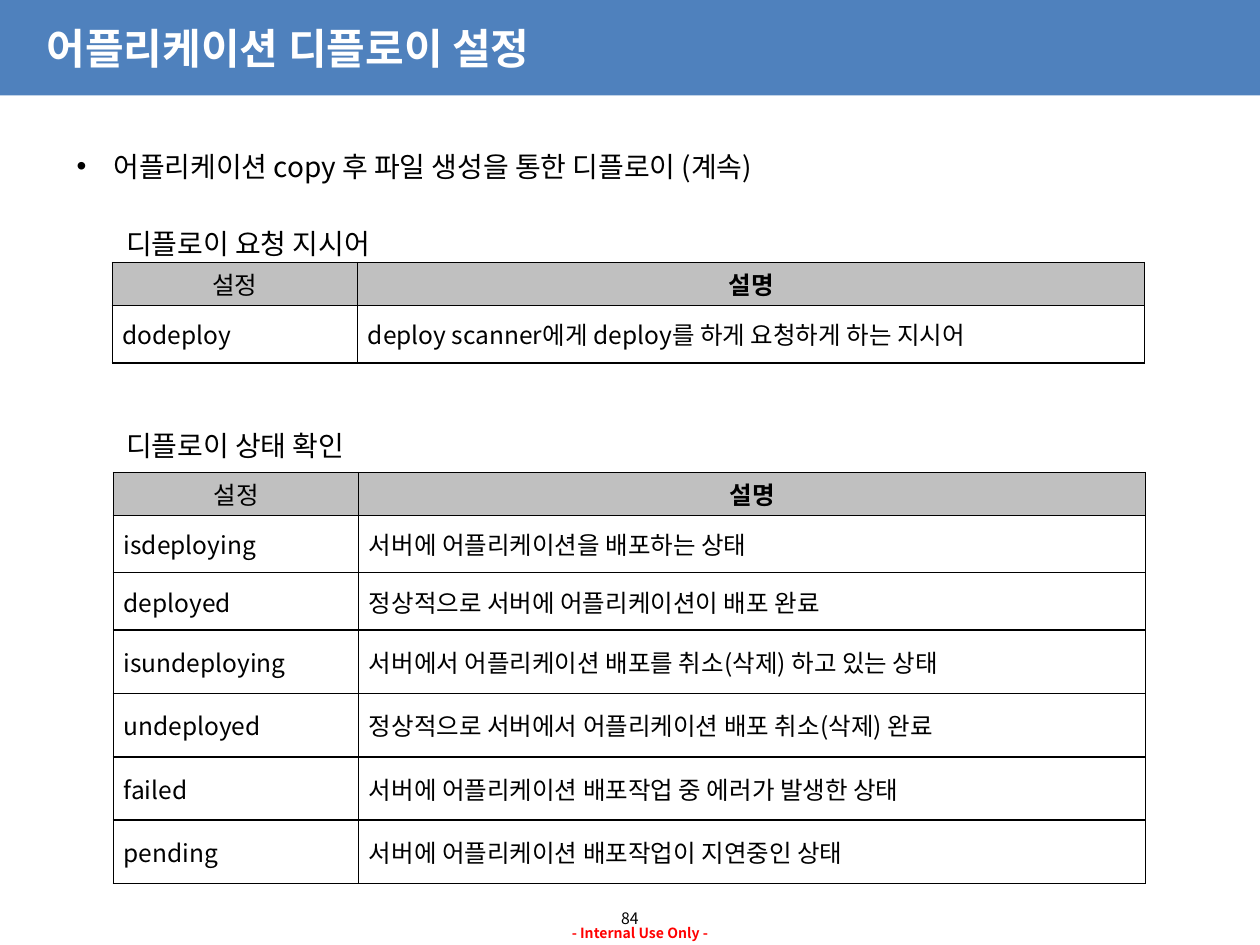
from dataclasses import dataclass

from lxml import etree
from pptx import Presentation
from pptx.dml.color import RGBColor
from pptx.enum.shapes import MSO_SHAPE
from pptx.enum.text import MSO_ANCHOR as Anchor, PP_ALIGN as Align
from pptx.oxml import parse_xml
from pptx.oxml.ns import nsdecls, qn
from pptx.util import Pt


@dataclass(frozen=True)
class Theme:
    font: str = "Noto Sans CJK KR"
    banner: RGBColor = RGBColor(0x4F, 0x81, 0xBD)
    header: RGBColor = RGBColor(0xC0, 0xC0, 0xC0)
    white: RGBColor = RGBColor(0xFF, 0xFF, 0xFF)
    black: RGBColor = RGBColor(0, 0, 0)
    red: RGBColor = RGBColor(0xFF, 0, 0)
    title: int = 24
    body: int = 16
    cell: int = 14
    page: int = 9
    notice: int = 8


theme = Theme()


def write(frame, text, size=theme.body, color=theme.black, bold=False,
          align=Align.LEFT, spacing=1.0, indent=0, bullet=False):
    """Fill a text frame with one formatted paragraph."""
    paragraph = frame.paragraphs[0]
    properties = paragraph._p.get_or_add_pPr()
    if indent:
        properties.set("marL", str(Pt(indent)))
    if bullet:
        properties.set("indent", str(-Pt(indent)))
        etree.SubElement(properties, qn("a:buFont"), typeface="Arial")
        etree.SubElement(properties, qn("a:buChar"), char="•")
    paragraph.alignment = align
    paragraph.line_spacing = spacing
    run = paragraph.add_run()
    run.text = text
    font = run.font
    font.name, font.size, font.bold = theme.font, Pt(size), bold
    font.color.rgb = color
    etree.SubElement(run._r.get_or_add_rPr(), qn("a:ea"), typeface=theme.font)


def add_text(left, top, width, height, text, margins=(7.2, 3.6),
             anchor=Anchor.TOP, wrap=True, **style):
    box = slide.shapes.add_textbox(Pt(left), Pt(top), Pt(width), Pt(height))
    frame = box.text_frame
    frame.word_wrap = wrap
    frame.vertical_anchor = anchor
    frame.margin_left = frame.margin_right = Pt(margins[0])
    frame.margin_top = frame.margin_bottom = Pt(margins[1])
    write(frame, text, **style)


presentation = Presentation()
presentation.slide_width, presentation.slide_height = Pt(720), Pt(540)
slide = presentation.slides.add_slide(presentation.slide_layouts[6])

# Banner, title and footer
banner = slide.shapes.add_shape(MSO_SHAPE.RECTANGLE, 0, 0, Pt(720), Pt(54.6))
banner.shadow.inherit = False
banner.fill.solid()
banner.fill.fore_color.rgb = theme.banner
banner.line.fill.background()
add_text(19.6, 0, 675, 54.6, "어플리케이션 디플로이 설정", anchor=Anchor.MIDDLE,
         size=theme.title, color=theme.white, bold=True)
add_text(339, 510.5, 42, 28.8, "84", margins=(0, 0), anchor=Anchor.MIDDLE,
         wrap=False, size=theme.page, align=Align.CENTER)
add_text(263.5, 524.9, 204.5, 17.3, "- Internal Use Only -", size=theme.notice,
         color=theme.red, bold=True, align=Align.CENTER)

# Topic and section headings
add_text(36.7, 77.8, 618.5, 30.2, "어플리케이션 copy 후 파일 생성을 통한 디플로이 (계속)",
         spacing=1.2, indent=21, bullet=True)
for top, heading in ((116.6, "디플로이 요청 지시어"), (231.5, "디플로이 상태 확인")):
    add_text(65, top, 590, 42, heading, spacing=1.5)

# Tables: left, top, then (row height, setting, description)
tables = [
    (64.2, 150, [
        (32.8, "dodeploy", "deploy scanner에게 deploy를 하게 요청하게 하는 지시어"),
    ]),
    (64.8, 270, [
        (32.8, "isdeploying", "서버에 어플리케이션을 배포하는 상태"),
        (32.8, "deployed", "정상적으로 서버에 어플리케이션이 배포 완료"),
        (36.2, "isundeploying", "서버에서 어플리케이션 배포를 취소(삭제) 하고 있는 상태"),
        (36.2, "undeployed", "정상적으로 서버에서 어플리케이션 배포 취소(삭제) 완료"),
        (36.2, "failed", "서버에 어플리케이션 배포작업 중 에러가 발생한 상태"),
        (36.2, "pending", "서버에 어플리케이션 배포작업이 지연중인 상태"),
    ]),
]
column_widths = (140.2, 449.6)
for left, top, entries in tables:
    rows = [(24.5, "설정", "설명"), *entries]
    frame = slide.shapes.add_table(
        len(rows), 2, Pt(left), Pt(top),
        Pt(sum(column_widths)), Pt(sum(row[0] for row in rows)))
    table = frame.table
    table.horz_banding = False
    for column, width in zip(table.columns, column_widths):
        column.width = Pt(width)
    for row_index, (height, *texts) in enumerate(rows):
        table.rows[row_index].height = Pt(height)
        is_header = row_index == 0
        for column_index, text in enumerate(texts):
            cell = table.cell(row_index, column_index)
            is_bold = is_header and column_index == 1
            cell.margin_left = cell.margin_right = Pt(6 if is_bold else 0)
            cell.margin_top = cell.margin_bottom = Pt(2.2)
            cell.vertical_anchor = Anchor.BOTTOM if is_bold else Anchor.MIDDLE
            properties = cell._tc.get_or_add_tcPr()
            for side in ("lnL", "lnR", "lnT", "lnB"):
                properties.append(parse_xml(
                    f'<a:{side} {nsdecls("a")} w="{Pt(1)}"><a:solidFill>'
                    f'<a:srgbClr val="{theme.black}"/></a:solidFill></a:{side}>'))
            if is_header:
                cell.fill.solid()
                cell.fill.fore_color.rgb = theme.header
            else:
                cell.fill.background()
            write(cell.text_frame, text, size=theme.cell, bold=is_bold,
                  align=Align.CENTER if is_header else Align.LEFT,
                  indent=0 if is_header else 5.8)

presentation.save("out.pptx")
